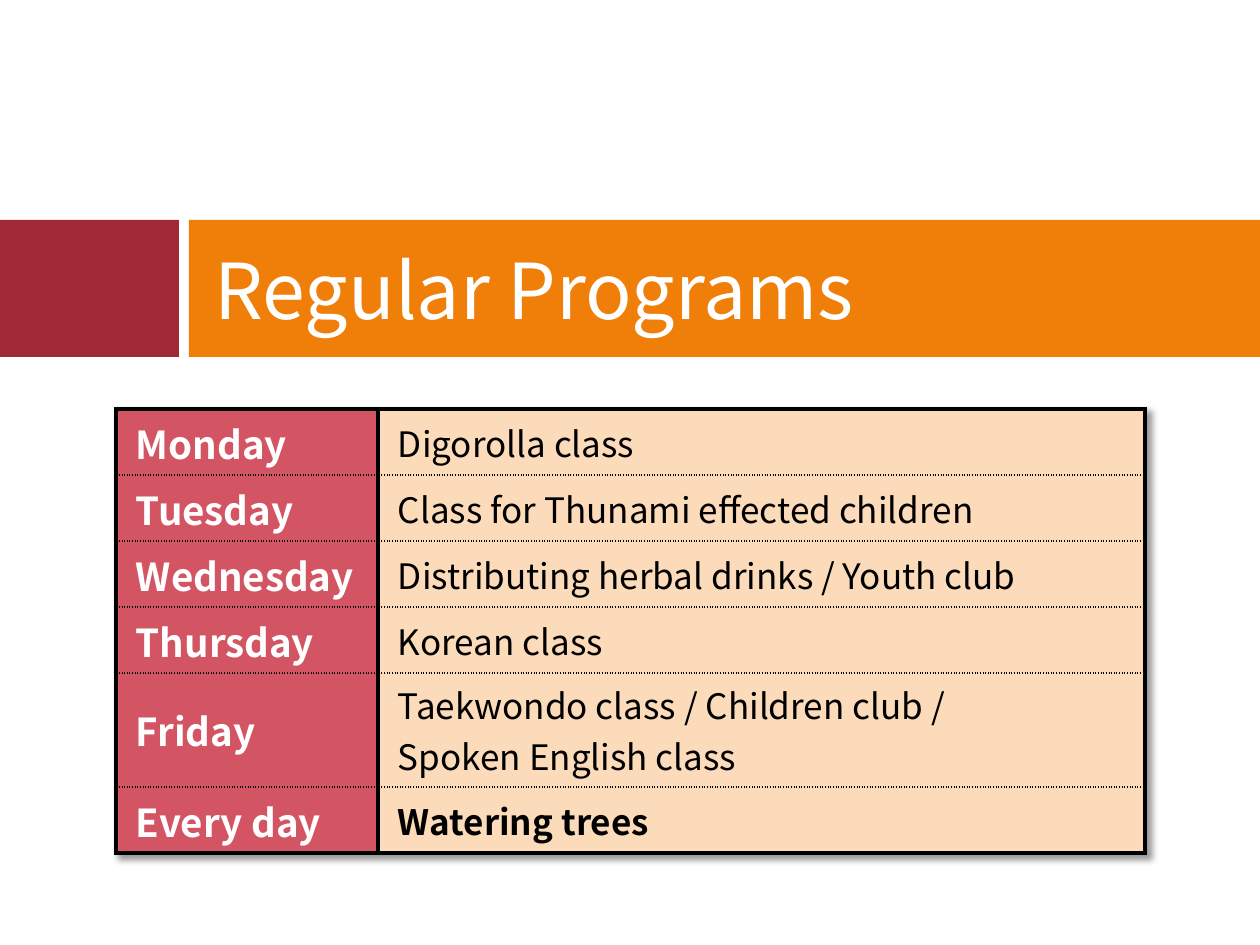
"""Build the weekly programme slide with a banner and a bordered timetable."""
from dataclasses import dataclass

from lxml import etree
from pptx import Presentation
from pptx.dml.color import RGBColor
from pptx.enum.shapes import MSO_SHAPE
from pptx.enum.text import MSO_ANCHOR
from pptx.oxml import parse_xml
from pptx.oxml.ns import qn
from pptx.util import Emu, Pt

RECTANGLE = MSO_SHAPE.RECTANGLE
MIDDLE = MSO_ANCHOR.MIDDLE
PX = 914400 // 126
FONT = "Noto Sans CJK SC"
COLORS = {
    "maroon": "9F2936",
    "orange": "F07F09",
    "rose": "D35564",
    "peach": "FCDBBA",
    "white": "FFFFFF",
    "black": "000000",
}
COLUMN_WIDTHS = (262, 767)
ROW_HEIGHT, TALL_ROW_HEIGHT = 66, 114
OUTER, DIVIDER, DOTTED = (3, "solid"), (2.25, "solid"), (1, "sysDot")
SHADOW = (
    '<a:effectLst xmlns:a="http://schemas.openxmlformats.org/drawingml/2006/main">'
    '<a:outerShdw blurRad="50800" dist="38100" dir="2700000" algn="tl">'
    '<a:srgbClr val="000000"><a:alpha val="40000"/></a:srgbClr>'
    "</a:outerShdw></a:effectLst>"
)


@dataclass(frozen=True)
class Bar:
    left: int
    width: int
    color: str


@dataclass(frozen=True)
class Program:
    day: str
    activities: tuple[str, ...]
    bold: bool = False


@dataclass(frozen=True)
class TextStyle:
    size: int
    color: str
    bold: bool = False


BANNER_TOP, BANNER_HEIGHT = 220, 137
BARS = (Bar(0, 179, "maroon"), Bar(189, 1071, "orange"))
PROGRAMS = (
    Program("Monday", ("Digorolla class",)),
    Program("Tuesday", ("Class for Thunami effected children",)),
    Program("Wednesday", ("Distributing herbal drinks / Youth club",)),
    Program("Thursday", ("Korean class",)),
    Program("Friday", ("Taekwondo class / Children club /", "Spoken English class")),
    Program("Every day", ("Watering trees",), bold=True),
)


def px(length: int) -> Emu:
    """Turn whole pixels into EMU."""
    return Emu(length * PX)


def rgb(name: str) -> RGBColor:
    """Look up a named colour."""
    return RGBColor.from_string(COLORS[name])


def write_lines(frame, lines: tuple[str, ...], style: TextStyle) -> None:
    """Write one paragraph per line in a single style."""
    for index, line in enumerate(lines):
        para = frame.add_paragraph() if index else frame.paragraphs[0]
        para.text = line
        para.font.name = FONT
        para.font.size = Pt(style.size)
        para.font.bold = style.bold
        para.font.color.rgb = rgb(style.color)


def draw_bar(page, bar: Bar) -> None:
    """Draw one plain block of the banner."""
    block = page.shapes.add_shape(
        RECTANGLE, px(bar.left), px(BANNER_TOP), px(bar.width), px(BANNER_HEIGHT)
    )
    block.shadow.inherit = False
    block.fill.solid()
    block.fill.fore_color.rgb = rgb(bar.color)
    block.line.fill.background()


def draw_title(page, title: str) -> None:
    """Write the title over the banner."""
    box = page.shapes.add_textbox(
        px(189), px(BANNER_TOP), px(1050), px(BANNER_HEIGHT)
    )
    frame = box.text_frame
    frame.word_wrap = True
    frame.vertical_anchor = MIDDLE
    frame.margin_left = px(26)
    write_lines(frame, (title,), TextStyle(44, "white"))


def set_borders(cell, borders: dict[str, tuple[float, str]]) -> None:
    """Put black borders before the fill of a cell."""
    properties = cell._tc.get_or_add_tcPr()
    for index, (side, (width, dash)) in enumerate(borders.items()):
        line = etree.Element(qn(f"a:ln{side}"), w=str(Pt(width)))
        fill = etree.SubElement(line, qn("a:solidFill"))
        etree.SubElement(fill, qn("a:srgbClr"), val=COLORS["black"])
        etree.SubElement(line, qn("a:prstDash"), val=dash)
        properties.insert(index, line)


def fill_cell(cell, lines: tuple[str, ...], style: TextStyle, color: str) -> None:
    """Fill a timetable cell and write its text."""
    cell.fill.solid()
    cell.fill.fore_color.rgb = rgb(color)
    cell.vertical_anchor = MIDDLE
    cell.margin_left = px(20)
    write_lines(cell.text_frame, lines, style)


def draw_timetable(page, programs: tuple[Program, ...]) -> None:
    """Draw the table of days and activities."""
    heights = [
        TALL_ROW_HEIGHT if len(program.activities) > 1 else ROW_HEIGHT
        for program in programs
    ]
    table = page.shapes.add_table(
        len(programs), 2, px(116), px(409), px(sum(COLUMN_WIDTHS)), px(sum(heights))
    ).table
    table.first_row = table.horz_banding = False
    table._tbl.tblPr.insert(0, parse_xml(SHADOW))
    for column, width in zip(table.columns, COLUMN_WIDTHS):
        column.width = px(width)
    last = len(programs) - 1
    for index, (program, height) in enumerate(zip(programs, heights)):
        table.rows[index].height = px(height)
        day, activity = table.cell(index, 0), table.cell(index, 1)
        fill_cell(day, (program.day,), TextStyle(22, "white", True), "rose")
        fill_cell(
            activity, program.activities, TextStyle(20, "black", program.bold), "peach"
        )
        edges = {
            "T": DOTTED if index else OUTER,
            "B": OUTER if index == last else DOTTED,
        }
        set_borders(day, {"L": OUTER, "R": DIVIDER, **edges})
        set_borders(activity, {"L": DIVIDER, "R": OUTER, **edges})


def main() -> None:
    """Build and save the deck."""
    deck = Presentation()
    deck.slide_width, deck.slide_height = px(1260), px(945)
    page = deck.slides.add_slide(deck.slide_layouts[6])
    for bar in BARS:
        draw_bar(page, bar)
    draw_title(page, "Regular Programs")
    draw_timetable(page, PROGRAMS)
    deck.save("out.pptx")


if __name__ == "__main__":
    main()
